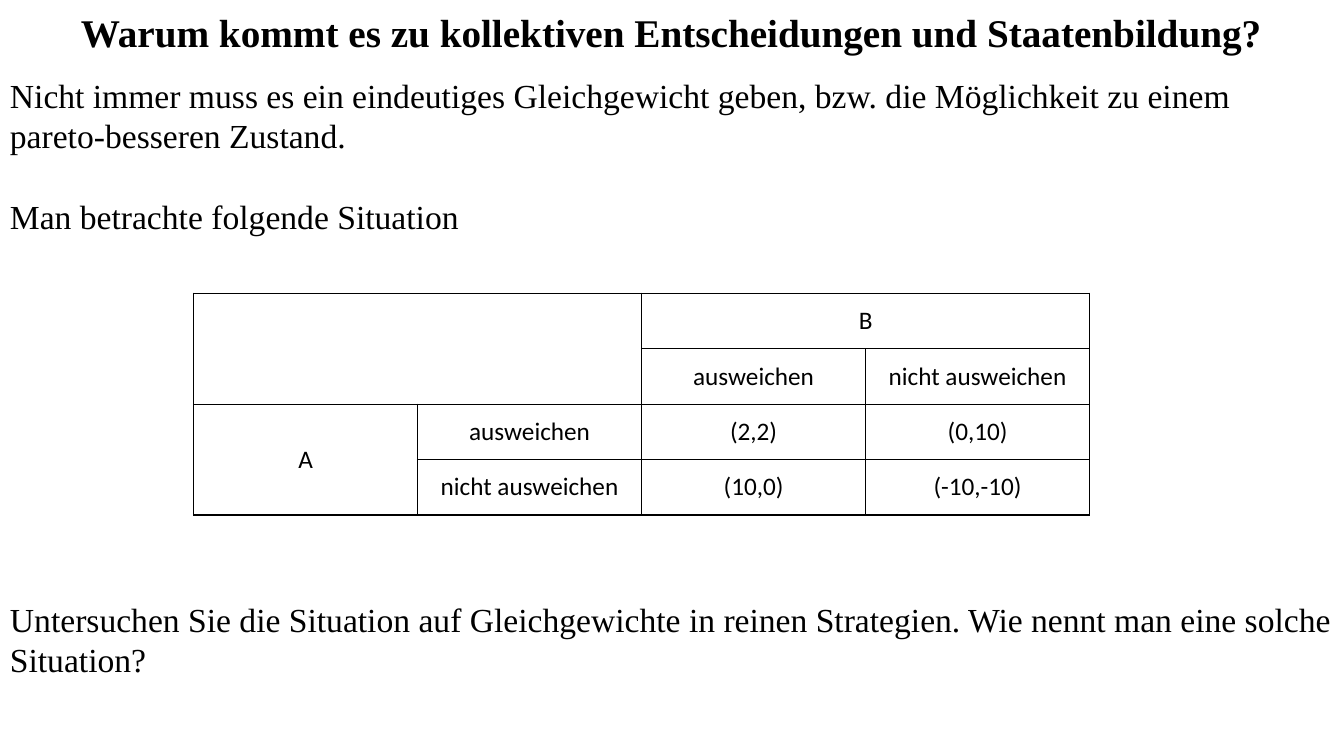
from lxml import etree
from pptx import Presentation
from pptx.dml.color import RGBColor
from pptx.enum.text import MSO_ANCHOR, PP_ALIGN
from pptx.oxml.ns import qn
from pptx.util import Inches, Pt

BLACK = RGBColor(0, 0, 0)
CENTER, LEFT = PP_ALIGN.CENTER, PP_ALIGN.LEFT
MIDDLE = MSO_ANCHOR.MIDDLE
SERIF, SANS = "Times New Roman", "Calibri"
WIDE, HIGH = 13.33, 7.5
COL, ROW = WIDE / 6, 0.55
LINE = 28.8

TITLE = "Warum kommt es zu kollektiven Entscheidungen und Staatenbildung?"
# Each paragraph with the number of free lines above it
BODY = [
    ("Nicht immer muss es ein eindeutiges Gleichgewicht geben, bzw. "
     "die Möglichkeit zu einem pareto-besseren Zustand.", 0),
    ("Man betrachte folgende Situation", 1),
    ("Untersuchen Sie die Situation auf Gleichgewichte in reinen Strategien. "
     "Wie nennt man eine solche Situation?", 9),
]
GAME = [
    ["", "", "B", ""],
    ["", "", "ausweichen", "nicht ausweichen"],
    ["A", "ausweichen", "(2,2)", "(0,10)"],
    ["", "nicht ausweichen", "(10,0)", "(-10,-10)"],
]
SPANS = [((0, 0), (1, 1)), ((0, 2), (0, 3)), ((2, 0), (3, 0))]


def style(par, font, size, align, bold=False):
    par.alignment = align
    for run in par.runs:
        run.font.name = font
        run.font.size = Pt(size)
        run.font.bold = bold
        run.font.color.rgb = BLACK


def add_box(slide, top, height):
    box = slide.shapes.add_textbox(0, Inches(top), Inches(WIDE - 0.02),
                                   Inches(height))
    box.text_frame.word_wrap = True
    return box.text_frame


def add_title(slide):
    frame = add_box(slide, 0.03, 0.59)
    frame.text = TITLE
    style(frame.paragraphs[0], SERIF, 28, CENTER, bold=True)


def add_body(slide):
    frame = add_box(slide, 0.69, 6.62)
    frame.text = "\n".join(text for text, _ in BODY)
    for par, (_, free) in zip(frame.paragraphs, BODY):
        style(par, SERIF, 24, LEFT)
        par.line_spacing = Pt(LINE)
        par.space_before = Pt(free * LINE)


def add_edges(cell):
    """Draw a thin black line on all four sides of the cell."""
    props = cell._tc.get_or_add_tcPr()
    for side in ("a:lnL", "a:lnR", "a:lnT", "a:lnB"):
        edge = etree.SubElement(props, qn(side), w=str(Pt(1)))
        fill = etree.SubElement(edge, qn("a:solidFill"))
        etree.SubElement(fill, qn("a:srgbClr"), val=str(BLACK))


def add_game(slide):
    rows, cols = len(GAME), len(GAME[0])
    table = slide.shapes.add_table(
        rows, cols, Inches(1.92), Inches(2.91),
        Inches(cols * COL), Inches(rows * ROW)).table
    table.first_row = table.horz_banding = False
    for r, line in enumerate(GAME):
        for c, text in enumerate(line):
            cell = table.cell(r, c)
            cell.text = text
            cell.vertical_anchor = MIDDLE
            style(cell.text_frame.paragraphs[0], SANS, 18, CENTER)
            add_edges(cell)
            cell.fill.background()
    for start, end in SPANS:
        table.cell(*start).merge(table.cell(*end))


def main():
    deck = Presentation()
    deck.slide_width, deck.slide_height = Inches(WIDE), Inches(HIGH)
    slide = deck.slides.add_slide(deck.slide_layouts[6])
    add_title(slide)
    add_body(slide)
    add_game(slide)
    deck.save("out.pptx")


if __name__ == "__main__":
    main()
